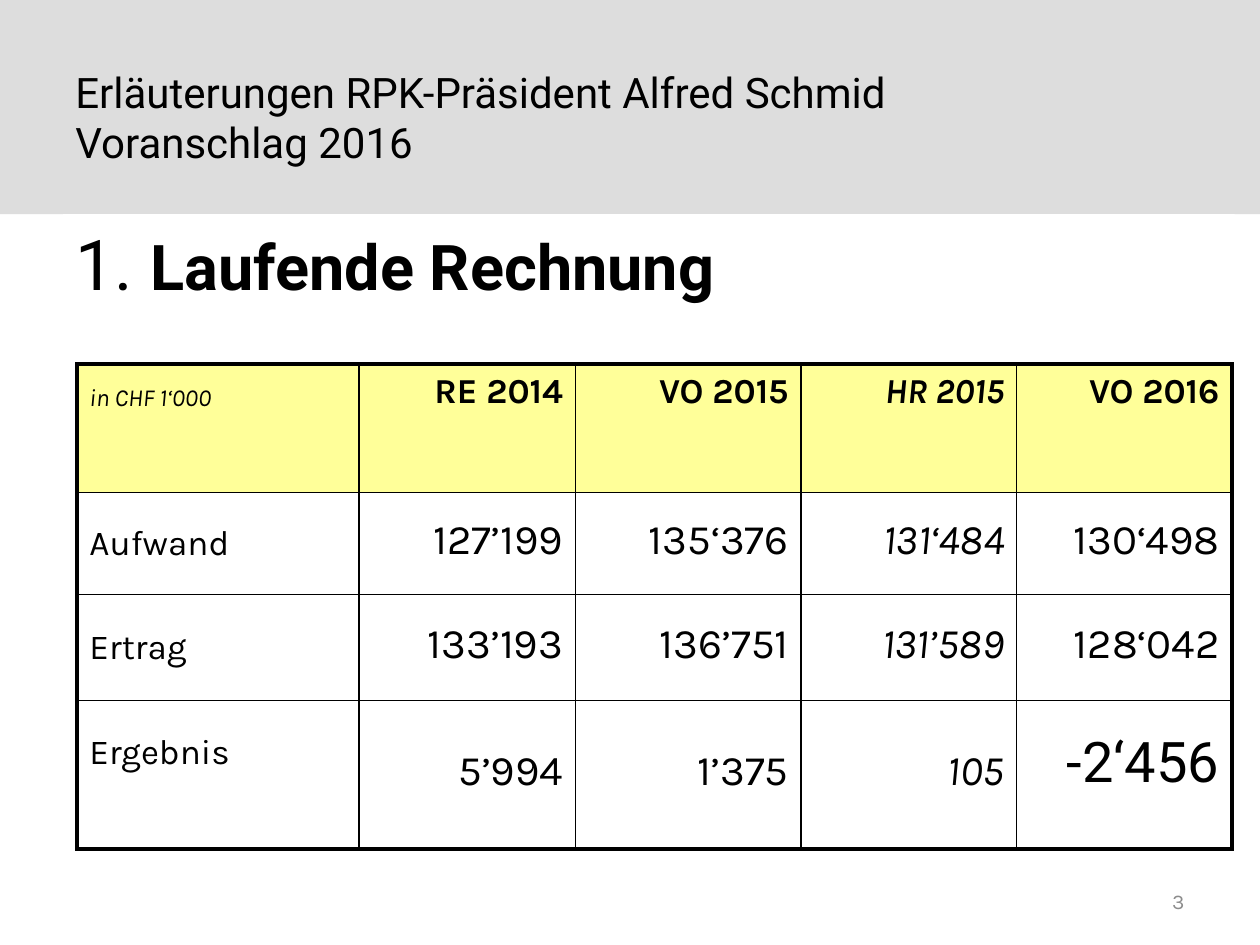
from lxml import etree
from pptx import Presentation
from pptx.dml.color import RGBColor
from pptx.enum import shapes, text
from pptx.oxml.ns import qn
from pptx.util import Inches, Pt

BLACK = RGBColor(0x00, 0x00, 0x00)
WHITE = RGBColor(0xFF, 0xFF, 0xFF)
BAND_GRAY = RGBColor(0xDD, 0xDD, 0xDD)
NUMBER_GRAY = RGBColor(0x8C, 0x8C, 0x8C)
HEADER_YELLOW = RGBColor(0xFF, 0xFF, 0x99)

HEADING_FONT = "Roboto"
TABLE_FONT = "Karla"
THIN, THICK = 1, 2.25

COLUMN_WIDTHS = [2.24, 1.72, 1.79, 1.71, 1.71]
ROW_HEIGHTS = [1.02, 0.81, 0.84, 1.18]
FIGURES = [
    ["in CHF 1‘000", "RE 2014", "VO 2015", "HR 2015", "VO 2016"],
    ["Aufwand", "127’199", "135‘376", "131‘484", "130‘498"],
    ["Ertrag", "133’193", "136’751", "131’589", "128‘042"],
    ["Ergebnis", "5’994", "1’375", "105", "-2‘456"],
]
PROJECTION_COLUMN = 3


def style_font(font, size, name, color=BLACK, bold=False, italic=False):
    font.size = Pt(size)
    font.name = name
    font.color.rgb = color
    font.bold = bold
    font.italic = italic


def add_band(page):
    band = page.shapes.add_shape(
        shapes.MSO_SHAPE.RECTANGLE, 0, 0, Inches(10), Inches(1.7))
    band.shadow.inherit = False
    band.fill.solid()
    band.fill.fore_color.rgb = BAND_GRAY
    band.line.fill.background()


def add_text(page, left, top, width, height, words, size, font_name,
             color=BLACK, anchor=text.MSO_ANCHOR.MIDDLE, align=text.PP_ALIGN.LEFT):
    box = page.shapes.add_textbox(
        Inches(left), Inches(top), Inches(width), Inches(height))
    frame = box.text_frame
    frame.word_wrap = True
    frame.vertical_anchor = anchor
    frame.text = words
    paragraph = frame.paragraphs[0]
    paragraph.alignment = align
    for span in paragraph.runs:
        style_font(span.font, size, font_name, color)
    return box


def add_section_heading(page):
    box = add_text(page, 0.5, 1.7, 9.3, 4.6, "1. ", 40, HEADING_FONT,
                   anchor=text.MSO_ANCHOR.TOP)
    box.fill.solid()
    box.fill.fore_color.rgb = WHITE
    paragraph = box.text_frame.paragraphs[0]
    span = paragraph.add_run()
    span.text = "Laufende Rechnung"
    style_font(span.font, 36, HEADING_FONT, bold=True)
    # Hanging indent
    properties = paragraph._p.get_or_add_pPr()
    properties.set("marL", str(Inches(0.38)))
    properties.set("indent", str(-Inches(0.38)))


def set_borders(cell, widths):
    properties = cell._tc.get_or_add_tcPr()
    for side, width in zip("LRTB", widths):
        line = etree.SubElement(properties, qn(f"a:ln{side}"), w=str(Pt(width)))
        fill = etree.SubElement(line, qn("a:solidFill"))
        etree.SubElement(fill, qn("a:srgbClr"), val=str(BLACK))


def fill_cell(cell, words, row, column):
    last_row, last_column = len(ROW_HEIGHTS) - 1, len(COLUMN_WIDTHS) - 1
    header, label = row == 0, column == 0
    outer_edges = (label, column == last_column, header, row == last_row)
    set_borders(cell, [THICK if edge else THIN for edge in outer_edges])
    if header:
        cell.fill.solid()
        cell.fill.fore_color.rgb = HEADER_YELLOW
    else:
        cell.fill.background()
        cell.vertical_anchor = text.MSO_ANCHOR.MIDDLE

    cell.text = words
    paragraph = cell.text_frame.paragraphs[0]
    paragraph.line_spacing = Pt(24)
    paragraph.space_after = Pt(2)
    paragraph.alignment = text.PP_ALIGN.LEFT if label else text.PP_ALIGN.RIGHT

    size, font_name = (20 if header or label else 24), TABLE_FONT
    if header and label:
        size = 14
    elif row == last_row and column == last_column:
        size, font_name = 32, HEADING_FONT
    style_font(paragraph.runs[0].font, size, font_name,
               bold=header and not label,
               italic=column == PROJECTION_COLUMN or (header and label))


def add_budget_table(page):
    frame = page.shapes.add_table(
        len(ROW_HEIGHTS), len(COLUMN_WIDTHS), Inches(0.61), Inches(2.89),
        Inches(sum(COLUMN_WIDTHS)), Inches(sum(ROW_HEIGHTS)))
    table = frame.table
    table.first_row = False
    table.horz_banding = False
    for column, width in zip(table.columns, COLUMN_WIDTHS):
        column.width = Inches(width)
    for row, height in zip(table.rows, ROW_HEIGHTS):
        row.height = Inches(height)
    for r, values in enumerate(FIGURES):
        for c, words in enumerate(values):
            fill_cell(table.cell(r, c), words, r, c)
    # The result label sits above the middle of its row
    table.cell(len(ROW_HEIGHTS) - 1, 0).margin_bottom = Inches(0.41)


def main():
    deck = Presentation()
    deck.slide_width, deck.slide_height = Inches(10), Inches(7.5)
    page = deck.slides.add_slide(deck.slide_layouts[6])

    # Header band and page number
    add_band(page)
    add_text(page, 7.17, 6.95, 2.33, 0.4, "3", 12, TABLE_FONT, NUMBER_GRAY,
             align=text.PP_ALIGN.RIGHT)

    # Headings
    add_section_heading(page)
    add_text(page, 0.5, 0.3, 9, 1.25,
             "Erläuterungen RPK-Präsident Alfred Schmid \vVoranschlag 2016",
             24, HEADING_FONT)

    # Budget figures
    add_budget_table(page)
    deck.save("out.pptx")


if __name__ == "__main__":
    main()
